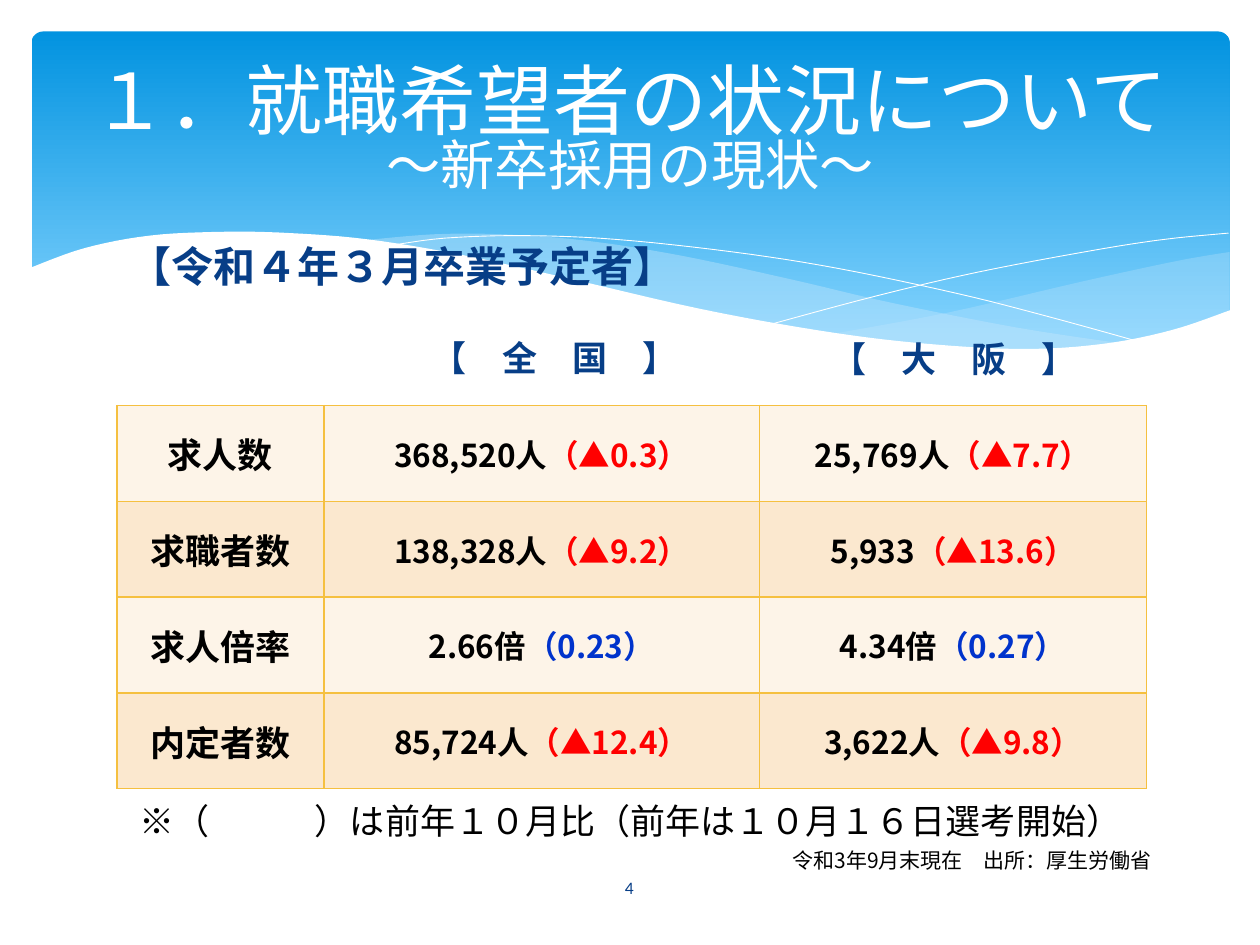
from dataclasses import dataclass

from lxml import etree
from pptx import Presentation
from pptx.dml.color import RGBColor
from pptx.enum.shapes import MSO_SHAPE
from pptx.enum.text import MSO_ANCHOR, MSO_AUTO_SIZE, PP_ALIGN
from pptx.oxml.ns import qn
from pptx.util import Inches, Pt

ROUNDED = MSO_SHAPE.ROUNDED_RECTANGLE
TOP, MIDDLE = MSO_ANCHOR.TOP, MSO_ANCHOR.MIDDLE
LEFT, CENTER, RIGHT = PP_ALIGN.LEFT, PP_ALIGN.CENTER, PP_ALIGN.RIGHT
GROW, FIXED = MSO_AUTO_SIZE.SHAPE_TO_FIT_TEXT, MSO_AUTO_SIZE.NONE

CJK = "Noto Sans CJK JP"
COLORS = {
    "white": "FFFFFF", "black": "000000", "navy": "073E87",
    "sky_top": "0293E0", "sky_bottom": "83D3FE", "mist": "C6E7FC",
    "fall": "FF0000", "rise": "0033CC", "border": "F5C040",
    "odd_row": "FDF4E8", "even_row": "FBE8CF",
}
Point = tuple[float, float]


@dataclass
class Wave:
    curves: list[list[Point]]
    opacity: int = 0
    fill: str = ""


@dataclass
class Label:
    text: str
    left: float
    top: float
    width: float
    height: float
    size: float
    color: str = "navy"
    bold: bool = False
    align: PP_ALIGN = LEFT
    font: str = CJK
    anchor: MSO_ANCHOR = TOP
    auto_size: MSO_AUTO_SIZE = GROW


@dataclass
class Figure:
    value: str
    change: str


@dataclass
class Row:
    name: str
    national: Figure
    osaka: Figure
    change_color: str = "fall"


WAVES = [
    Wave([[(9.76, 2), (9.35, 2.07), (8.61, 2.23), (7.53, 2.48), (6.61, 2.65)],
          [(6.61, 2.65), (7.19, 2.72), (7.69, 2.77), (8.24, 2.77), (8.81, 2.73),
           (9.28, 2.63), (9.76, 2.47)]], 29, "mist"),
    Wave([[(8.93, 2.73), (8.07, 2.6), (7.06, 2.4), (6.29, 2.22), (5.41, 2.03),
           (4.65, 1.91), (3.99, 1.86), (3.44, 1.86), (2.86, 1.91)],
          [(2.86, 1.91), (3.62, 2.03), (4.49, 2.22), (5.3, 2.4), (6.01, 2.55),
           (6.8, 2.68), (7.48, 2.76), (8.18, 2.78), (8.93, 2.73)]], 40, "mist"),
    Wave([[(3.09, 1.95), (3.53, 1.89), (4.16, 1.87), (4.89, 1.9), (5.82, 2),
           (6.65, 2.13), (7.6, 2.33), (8.31, 2.51), (9.07, 2.72)]]),
    Wave([[(6.13, 2.57), (6.95, 2.35), (7.76, 2.16), (8.66, 1.99), (9.24, 1.9),
           (9.75, 1.85)]]),
    Wave([[(9.77, 2.46), (9.3, 2.62), (8.75, 2.73), (8.09, 2.77), (7.26, 2.72),
           (6.48, 2.62), (5.55, 2.45), (4.47, 2.2), (3.65, 2.02), (2.92, 1.9),
           (2.3, 1.85), (1.77, 1.84), (1.19, 1.87), (0.67, 1.97), (0.23, 2.13)],
          [(0.23, 3.29), (9.77, 3.29)]], 100, "white"),
]

LABELS = [
    Label("【令和４年３月卒業予定者】", 0.93, 1.86, 8.43, 0.5, 24, bold=True),
    Label("令和3年9月末現在　出所：厚生労働省", 5.64, 6.68, 3.6, 0.5, 12, "black",
          align=RIGHT),
    Label("4", 4.36, 6.84, 1.27, 0.4, 10, align=CENTER, font="Calibri",
          anchor=MIDDLE, auto_size=FIXED),
    Label("※（　　　）は前年１０月比（前年は１０月１６日選考開始）",
          1.01, 6.3, 8.01, 0.44, 20, "black"),
    Label("【　全　国　】", 3.33, 2.62, 2.28, 0.44, 20, bold=True),
    Label("【　大　阪　】", 6.5, 2.63, 2.28, 0.44, 20, bold=True),
]

ROWS = [
    Row("求人数", Figure("368,520人", "▲0.3"), Figure("25,769人", "▲7.7")),
    Row("求職者数", Figure("138,328人", "▲9.2"), Figure("5,933", "▲13.6")),
    Row("求人倍率", Figure("2.66倍", "0.23"), Figure("4.34倍", "0.27"), "rise"),
    Row("内定者数", Figure("85,724人", "▲12.4"), Figure("3,622人", "▲9.8")),
]
COLUMN_WIDTHS = [1.64, 3.46, 3.07]
ROW_HEIGHT = 0.76


def rgb(name: str) -> RGBColor:
    return RGBColor.from_string(COLORS[name])


def smooth(points: list[Point], steps: int = 6) -> list[Point]:
    if len(points) < 3:
        return points
    padded = [points[0], *points, points[-1]]
    result = [points[0]]
    for a, b, c, d in zip(padded, padded[1:], padded[2:], padded[3:]):
        for step in range(1, steps + 1):
            t = step / steps
            result.append(tuple(
                0.5 * (2 * q + (r - p) * t + (2 * p - 5 * q + 4 * r - s) * t**2
                       + (3 * q - p - 3 * r + s) * t**3)
                for p, q, r, s in zip(a, b, c, d)))
    return result


def style_paragraph(paragraph, color: str, font: str = CJK, size: float | None = None,
                    bold: bool = False, align: PP_ALIGN = CENTER) -> None:
    paragraph.alignment = align
    paragraph.font.color.rgb = rgb(color)
    paragraph.font.name = font
    paragraph.font.bold = bold
    if size:
        paragraph.font.size = Pt(size)
    properties = paragraph._p.get_or_add_pPr().find(qn("a:defRPr"))
    etree.SubElement(properties, qn("a:ea"), typeface=font)


def add_banner(slide) -> None:
    banner = slide.shapes.add_shape(ROUNDED, Inches(0.25), Inches(0.25),
                                    Inches(9.51), Inches(2.7))
    banner.adjustments[0] = 0.034
    banner.shadow.inherit = False
    banner.line.fill.background()
    banner.fill.gradient()
    banner.fill.gradient_angle = 270
    stops = zip(banner.fill.gradient_stops, ("sky_top", "sky_bottom"), (0, 0.9))
    for stop, color, position in stops:
        stop.color.rgb = rgb(color)
        stop.position = position


def add_wave(slide, wave: Wave) -> None:
    points = [(Inches(x), Inches(y)) for curve in wave.curves for x, y in smooth(curve)]
    builder = slide.shapes.build_freeform(*points[0])
    builder.add_line_segments(points[1:], close=bool(wave.fill))
    shape = builder.convert_to_shape()
    shape.shadow.inherit = False
    if not wave.fill:
        shape.fill.background()
        shape.line.color.rgb = rgb("white")
        shape.line.width = Pt(0.5)
        return
    shape.line.fill.background()
    shape.fill.solid()
    shape.fill.fore_color.rgb = rgb(wave.fill)
    if wave.opacity < 100:
        color = shape._element.spPr.find(qn("a:solidFill"))[0]
        etree.SubElement(color, qn("a:alpha"), val=str(wave.opacity * 1000))


def add_title(slide) -> None:
    box = slide.shapes.add_textbox(Inches(0.5), Inches(0.37), Inches(9), Inches(1.37))
    frame = box.text_frame
    frame.word_wrap = True
    frame.vertical_anchor = MIDDLE
    paragraph = frame.paragraphs[0]
    style_paragraph(paragraph, "white")
    paragraph.line_spacing = 0.8
    heading = paragraph.add_run()
    heading.text = "１．就職希望者の状況について"
    heading.font.size = Pt(44)
    paragraph.add_line_break()
    subtitle = paragraph.add_run()
    subtitle.text = "～新卒採用の現状～"
    subtitle.font.size = Pt(31)


def add_label(slide, label: Label) -> None:
    box = slide.shapes.add_textbox(Inches(label.left), Inches(label.top),
                                   Inches(label.width), Inches(label.height))
    frame = box.text_frame
    frame.word_wrap = True
    frame.auto_size = label.auto_size
    frame.vertical_anchor = label.anchor
    paragraph = frame.paragraphs[0]
    paragraph.text = label.text
    style_paragraph(paragraph, label.color, label.font, label.size, label.bold, label.align)


def style_cell(cell, fill: str, size: float) -> None:
    cell.vertical_anchor = MIDDLE
    properties = cell._tc.get_or_add_tcPr()
    for side in ("lnL", "lnR", "lnT", "lnB"):
        line = etree.SubElement(properties, qn(f"a:{side}"), w=str(Pt(1)))
        paint = etree.SubElement(line, qn("a:solidFill"))
        etree.SubElement(paint, qn("a:srgbClr"), val=COLORS["border"])
    cell.fill.solid()
    cell.fill.fore_color.rgb = rgb(fill)
    style_paragraph(cell.text_frame.paragraphs[0], "black", size=size, bold=True)


def add_figures_table(slide) -> None:
    table = slide.shapes.add_table(
        len(ROWS), len(COLUMN_WIDTHS), Inches(0.93), Inches(3.22),
        Inches(sum(COLUMN_WIDTHS)), Inches(ROW_HEIGHT * len(ROWS))).table
    table.first_row = table.horz_banding = False
    for column, width in zip(table.columns, COLUMN_WIDTHS):
        column.width = Inches(width)
    for index, row in enumerate(ROWS):
        fill = "even_row" if index % 2 else "odd_row"
        table.cell(index, 0).text = row.name
        style_cell(table.cell(index, 0), fill, 20)
        for column, figure in enumerate((row.national, row.osaka), 1):
            cell = table.cell(index, column)
            style_cell(cell, fill, 18)
            paragraph = cell.text_frame.paragraphs[0]
            paragraph.add_run().text = figure.value
            change = paragraph.add_run()
            change.text = f"（{figure.change}）"
            change.font.color.rgb = rgb(row.change_color)


def main() -> None:
    presentation = Presentation()
    presentation.slide_width, presentation.slide_height = Inches(10), Inches(7.5)
    slide = presentation.slides.add_slide(presentation.slide_layouts[6])
    add_banner(slide)
    for wave in WAVES:
        add_wave(slide, wave)
    add_title(slide)
    for label in LABELS:
        add_label(slide, label)
    add_figures_table(slide)
    presentation.save("out.pptx")


if __name__ == "__main__":
    main()
